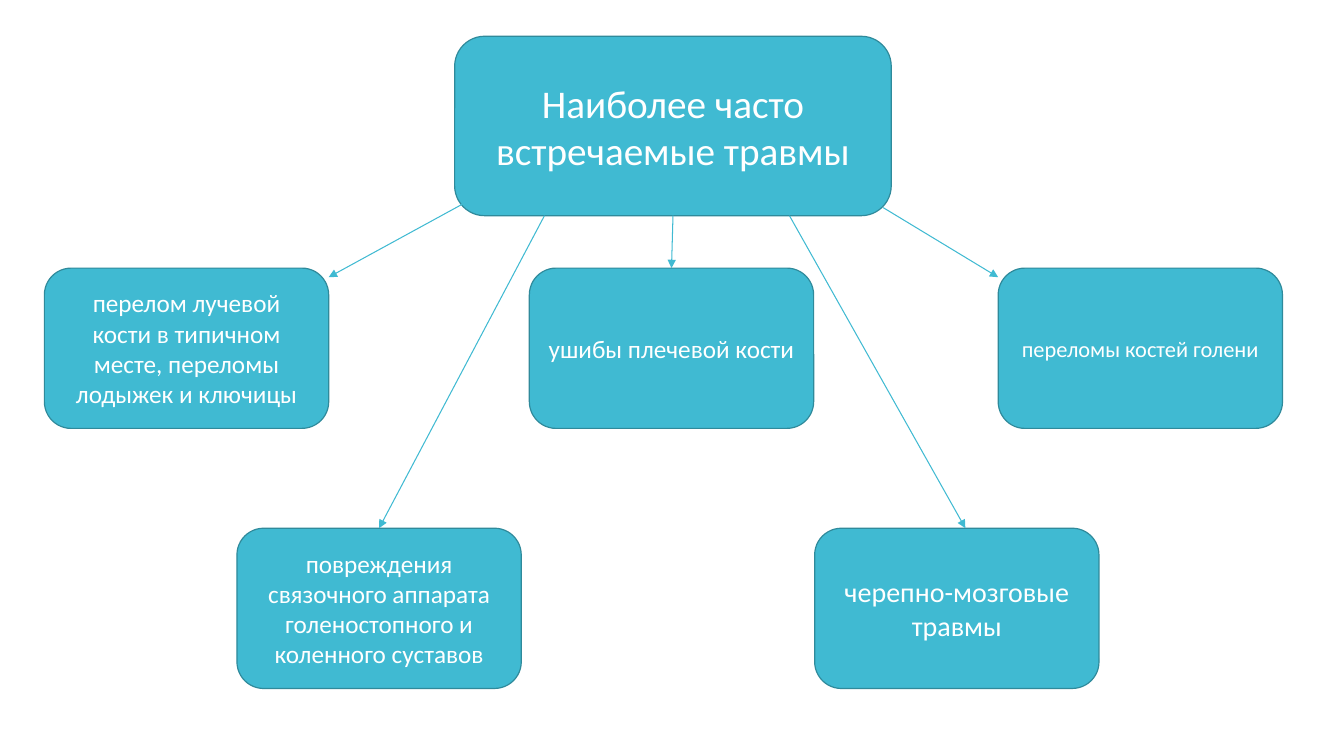
from pptx import Presentation
from pptx.dml.color import RGBColor
from pptx.enum.shapes import MSO_CONNECTOR, MSO_SHAPE
from pptx.enum.text import MSO_ANCHOR, PP_ALIGN
from pptx.oxml.ns import qn
from pptx.util import Inches, Pt
from lxml.etree import SubElement

SLIDE_WIDTH, SLIDE_HEIGHT = 13.33, 7.5
TEAL, DARK_TEAL, WHITE = "40BAD2", "2F8A9B", "FFFFFF"
TOP, BOTTOM = 0, 2

HEADING = ("Наиболее часто встречаемые травмы", 28)
HEADING_BOX = (4.51, 0.36, 4.33, 1.78)
INJURY_SIZE = (2.82, 1.59)
UPPER_ROW, LOWER_ROW = 2.66, 5.24
HEADING_BASE = HEADING_BOX[1] + HEADING_BOX[3]
CORNER_INSET = 0.09

# text, font size, left, row, arrow start, arrow end across the box, arrow drop, joined sides
INJURIES = [
    ("перелом лучевой кости в типичном месте, переломы лодыжек и ключицы", 18,
     0.44, UPPER_ROW, (4.67, 1.98), 1, CORNER_INSET, ()),
    ("ушибы плечевой кости", 18,
     5.25, UPPER_ROW, (6.68, HEADING_BASE), 0.5, 0, (BOTTOM, TOP)),
    ("переломы костей голени", 16,
     9.9, UPPER_ROW, (8.76, 2.06), 0, CORNER_INSET, ()),
    ("повреждения связочного аппарата голеностопного и коленного суставов", 18,
     2.35, LOWER_ROW, (5.4, HEADING_BASE), 0.5, 0, (None, TOP)),
    ("черепно-мозговые травмы", 20,
     8.08, LOWER_ROW, (7.83, HEADING_BASE), 0.53, 0, ()),
]


def color(hex_code):
    """Turn a hex string into a colour."""
    return RGBColor.from_string(hex_code)


def add_box(slide, text, size, bounds):
    """Add a rounded box with centred white text."""
    box = slide.shapes.add_shape(MSO_SHAPE.ROUNDED_RECTANGLE, *map(Inches, bounds))
    box.shadow.inherit = False
    box.fill.solid()
    box.fill.fore_color.rgb = color(TEAL)
    box.line.color.rgb = color(DARK_TEAL)
    box.line.width = Pt(0.85)
    frame = box.text_frame
    frame.word_wrap = True
    frame.vertical_anchor = MSO_ANCHOR.MIDDLE
    paragraph = frame.paragraphs[0]
    paragraph.alignment = PP_ALIGN.CENTER
    run = paragraph.add_run()
    run.text = text
    run.font.name = "Calibri"
    run.font.size = Pt(size)
    run.font.color.rgb = color(WHITE)
    return box


def add_arrow(slide, start, end):
    """Add a thin line with a triangle at its end."""
    arrow = slide.shapes.add_connector(MSO_CONNECTOR.STRAIGHT, *map(Inches, start + end))
    arrow.line.color.rgb = color(TEAL)
    arrow.line.width = Pt(0.75)
    SubElement(arrow.line._get_or_add_ln(), qn("a:tailEnd"), type="triangle")
    SubElement(arrow._element.spPr, qn("a:effectLst"))
    return arrow


def main():
    """Build the diagram of common injuries."""
    deck = Presentation()
    deck.slide_width, deck.slide_height = Inches(SLIDE_WIDTH), Inches(SLIDE_HEIGHT)
    slide = deck.slides.add_slide(deck.slide_layouts[6])
    heading = add_box(slide, *HEADING, HEADING_BOX)
    width, height = INJURY_SIZE
    for text, size, left, row, start, across, drop, sides in INJURIES:
        injury = add_box(slide, text, size, (left, row, width, height))
        arrow = add_arrow(slide, start, (left + across * width, row + drop))
        if sides:
            heading_side, injury_side = sides
            if heading_side is not None:
                arrow.begin_connect(heading, heading_side)
            arrow.end_connect(injury, injury_side)
    deck.save("out.pptx")


if __name__ == "__main__":
    main()
